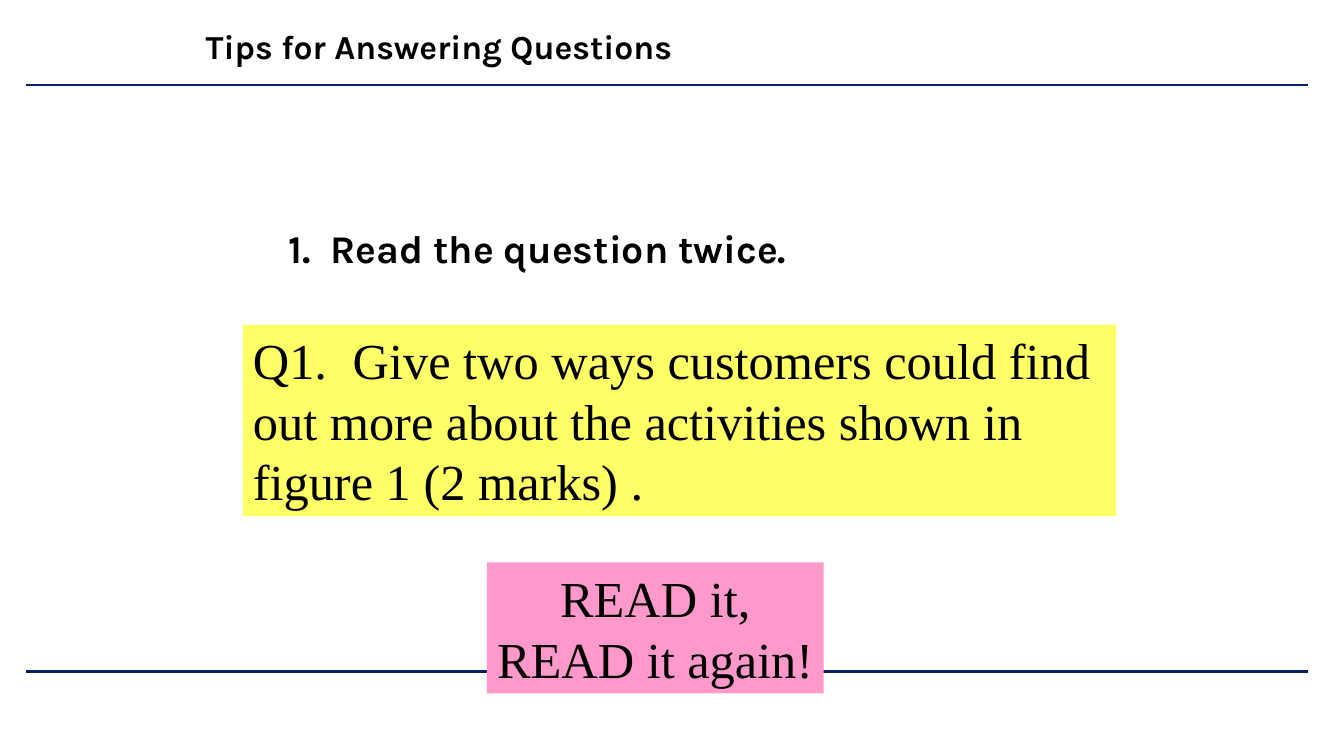
from lxml import etree
from pptx import Presentation
from pptx.dml.color import RGBColor
from pptx.enum.shapes import MSO_CONNECTOR, MSO_SHAPE
from pptx.enum.text import MSO_ANCHOR, MSO_AUTO_SIZE, PP_ALIGN
from pptx.oxml.ns import qn
from pptx.util import Inches, Pt


def color(hex_string):
    return RGBColor.from_string(hex_string)


def write_text(shape, lines, size, font_name, bold=False, align=PP_ALIGN.LEFT, wrap=True):
    frame = shape.text_frame
    frame.text = "\n".join(lines)
    frame.auto_size = MSO_AUTO_SIZE.NONE
    frame.word_wrap = wrap
    frame.vertical_anchor = MSO_ANCHOR.TOP
    formats = {"size": Pt(size), "name": font_name, "bold": bold}
    for paragraph in frame.paragraphs:
        paragraph.alignment = align
        for run in paragraph.runs:
            for attribute, value in formats.items():
                setattr(run.font, attribute, value)
            run.font.color.rgb = color("000000")


presentation = Presentation()
presentation.slide_width, presentation.slide_height = Inches(13.33), Inches(7.5)
slide = presentation.slides.add_slide(presentation.slide_layouts[5])

# Rules above and below the content
for y, width in ((0.84, 1.5), (6.66, 1.75)):
    rule = slide.shapes.add_connector(
        MSO_CONNECTOR.STRAIGHT, Inches(0.26), Inches(y), Inches(12.97), Inches(y))
    rule.line.color.rgb = color("052264")
    rule.line.width = Pt(width)
    etree.SubElement(rule.element.spPr, qn("a:effectLst"))

# Title
title = slide.shapes.title
title.left, title.top, title.width, title.height = map(Inches, (1.94, 0.21, 5.15, 0.5))
write_text(title, ["Tips for Answering Questions"], 24, "Karla", bold=True, wrap=False)

# Numbered tip, with a hanging indent behind the number
tip = slide.shapes.add_textbox(*map(Inches, (2.26, 2.18, 7.88, 0.57)))
write_text(tip, ["1.\tRead the question twice."], 28, "Karla", bold=True)
tip_properties = tip.text_frame.paragraphs[0]._p.get_or_add_pPr()
tip_properties.set("marL", str(Inches(0.92)))
tip_properties.set("indent", str(Inches(-0.42)))

# Coloured panels
reminder_lines = ["READ it,", "READ it again!"]
question_lines = ["Q1.\tGive two ways customers could find out more about "
                  "the activities shown in figure 1 (2 marks) ."]
panels = (
    ((4.83, 5.58, 3.34, 1.3), "FF99CC", reminder_lines, PP_ALIGN.CENTER, False),
    ((2.41, 3.22, 8.66, 1.9), "FFFF66", question_lines, PP_ALIGN.LEFT, True),
)
for box, fill, lines, align, wrap in panels:
    panel = slide.shapes.add_shape(MSO_SHAPE.RECTANGLE, *map(Inches, box))
    panel.shadow.inherit = False
    panel.fill.solid()
    panel.fill.fore_color.rgb = color(fill)
    panel.line.fill.background()
    write_text(panel, lines, 36, "Times New Roman", align=align, wrap=wrap)

# The question panel comes last: its tab stop sets the gap after "Q1."
question_properties = panel.text_frame.paragraphs[0]._p.get_or_add_pPr()
tab_list = etree.SubElement(question_properties, qn("a:tabLst"))
etree.SubElement(tab_list, qn("a:tab"), pos=str(Inches(0.99)), algn="l")

presentation.save("out.pptx")
